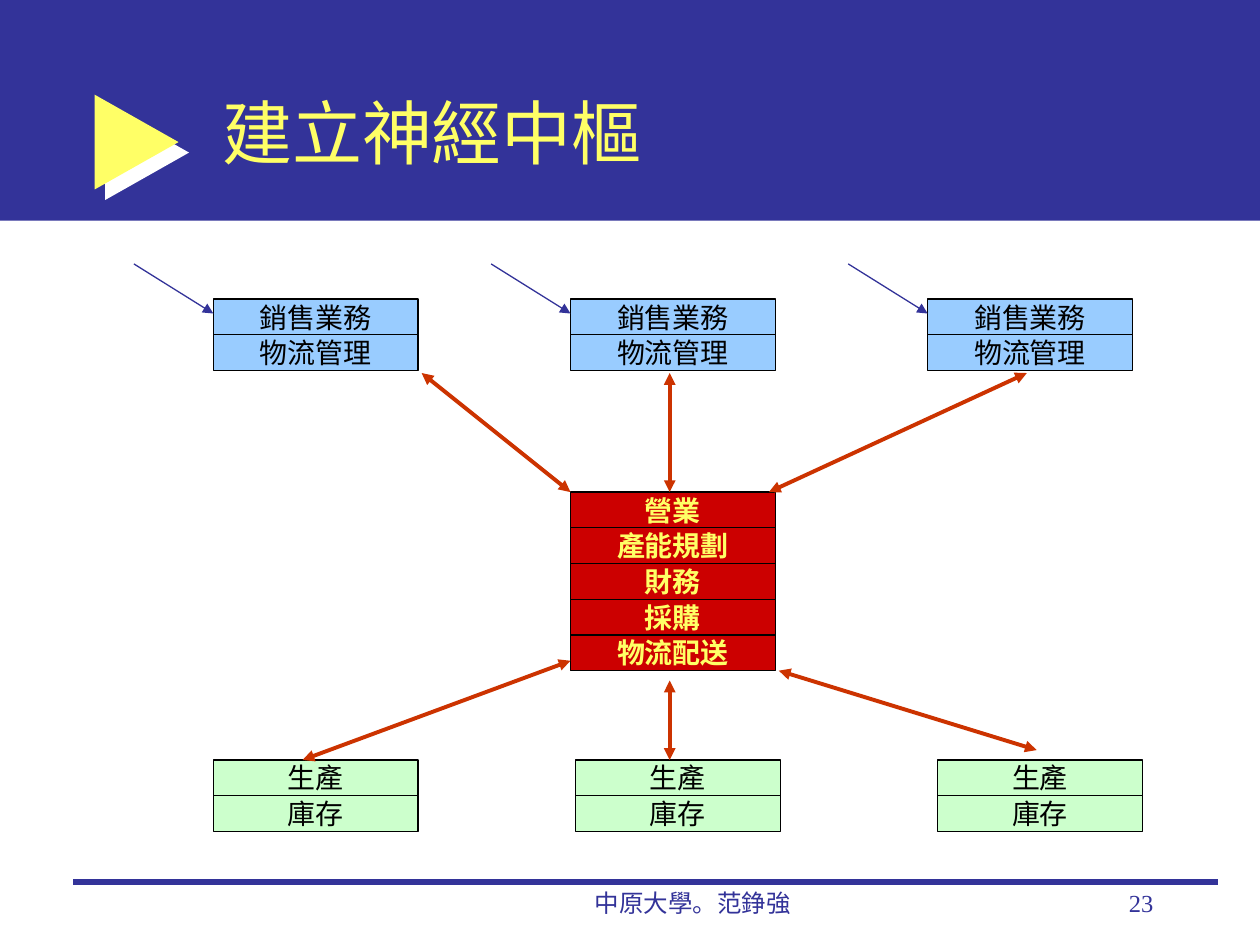
from lxml.etree import SubElement
from pptx import Presentation
from pptx.dml.color import RGBColor
from pptx.enum.shapes import MSO_CONNECTOR, MSO_SHAPE
from pptx.enum.text import MSO_ANCHOR, PP_ALIGN
from pptx.oxml.ns import qn
from pptx.util import Cm, Pt

HUES = {"navy": "333399", "gold": "FFFF66", "white": "FFFFFF", "sky": "99CCFF",
        "mint": "CCFFCC", "red": "CC0000", "rust": "CC3300", "black": "000000"}


def hue(name):
    return RGBColor.from_string(HUES[name])


def write(shape, text, size=16, font="Times New Roman", color="black", bold=False,
          align=PP_ALIGN.CENTER, anchor=MSO_ANCHOR.MIDDLE, wrap=True):
    frame = shape.text_frame
    frame.word_wrap = wrap
    frame.vertical_anchor = anchor
    para = frame.paragraphs[0]
    para.alignment = align
    run = para.add_run()
    run.text = text
    run.font.size = Pt(size)
    run.font.name = font
    run.font.bold = bold
    run.font.color.rgb = hue(color)


class Deck:
    """Holds the style and the current slide."""

    row = 0.72
    width = 4.13

    def __init__(self):
        self.file = Presentation()
        self.file.slide_width, self.file.slide_height = Cm(25.4), Cm(19.05)
        self.slide = self.file.slides.add_slide(self.file.slide_layouts[6])

    def shape(self, kind, box, fill, line=None):
        item = self.slide.shapes.add_shape(kind, *map(Cm, box))
        item.shadow.inherit = False
        item.fill.solid()
        item.fill.fore_color.rgb = hue(fill)
        if line:
            item.line.color.rgb = hue(line)
            item.line.width = Pt(0.75)
        else:
            item.line.fill.background()
        return item

    def marker(self, box):
        item = self.shape(MSO_SHAPE.RIGHT_ARROW, box, "gold")
        item.adjustments[0], item.adjustments[1] = 0.384, 1
        effects = item._element.spPr.find(qn("a:effectLst"))
        shade = SubElement(effects, qn("a:outerShdw"), blurRad="0", dist=str(Pt(8.5)),
                           dir="2700000", algn="ctr", rotWithShape="0")
        SubElement(shade, qn("a:srgbClr"), val=HUES["white"])

    def text(self, box, text, **style):
        write(self.slide.shapes.add_textbox(*map(Cm, box)), text, **style)

    def stack(self, left, top, words, fill, **style):
        for i, word in enumerate(words):
            box = (left, top + i * self.row, self.width, self.row)
            cell = self.shape(MSO_SHAPE.RECTANGLE, box, fill, "black")
            write(cell, word, wrap=False, **style)

    def line(self, ends, color, width, heads=()):
        item = self.slide.shapes.add_connector(MSO_CONNECTOR.STRAIGHT, *map(Cm, ends))
        item.line.color.rgb = hue(color)
        item.line.width = Pt(width)
        for head in heads:
            SubElement(item.line._get_or_add_ln(), qn("a:" + head), type="triangle")
        SubElement(item._element.spPr, qn("a:effectLst"))


def main():
    deck = Deck()
    deck.shape(MSO_SHAPE.RECTANGLE, (0, 0, 25.4, 4.45), "navy")
    deck.marker((1.91, 1.91, 1.69, 1.91))
    deck.line((1.48, 17.78, 24.55, 17.78), "navy", 3)
    deck.text((4.23, 1.06, 19.26, 3.18), "建立神經中樞", size=40, font="Arial",
              color="gold", align=PP_ALIGN.LEFT)
    foot = {"size": 14, "color": "navy", "anchor": MSO_ANCHOR.TOP}
    deck.text((9.95, 17.78, 8.04, 1.27), "中原大學。范錚強", **foot)
    deck.text((18.2, 17.78, 5.3, 1.27), "23", align=PP_ALIGN.RIGHT, **foot)

    for i in range(3):
        left = 4.3 + 7.2 * i
        deck.stack(left, 6.03, ["銷售業務", "物流管理"], "sky")
        deck.line((left - 1.6, 5.32, left, 6.32), "navy", 0.75, ["tailEnd"])
        deck.stack(4.3 + 7.3 * i, 15.32, ["生產", "庫存"], "mint")
    deck.stack(11.5, 9.92, ["營業", "產能規劃", "財務", "採購", "物流配送"], "red",
               color="gold", bold=True)

    for ends in [(8.5, 7.52, 11.5, 9.92), (13.5, 7.52, 13.5, 9.92),
                 (20.7, 7.52, 15.5, 9.92), (6.1, 15.32, 11.5, 13.32),
                 (13.5, 15.32, 13.5, 13.72), (20.9, 15.12, 15.7, 13.52)]:
        deck.line(ends, "rust", 2.25, ["headEnd", "tailEnd"])
    deck.file.save("out.pptx")


if __name__ == "__main__":
    main()
